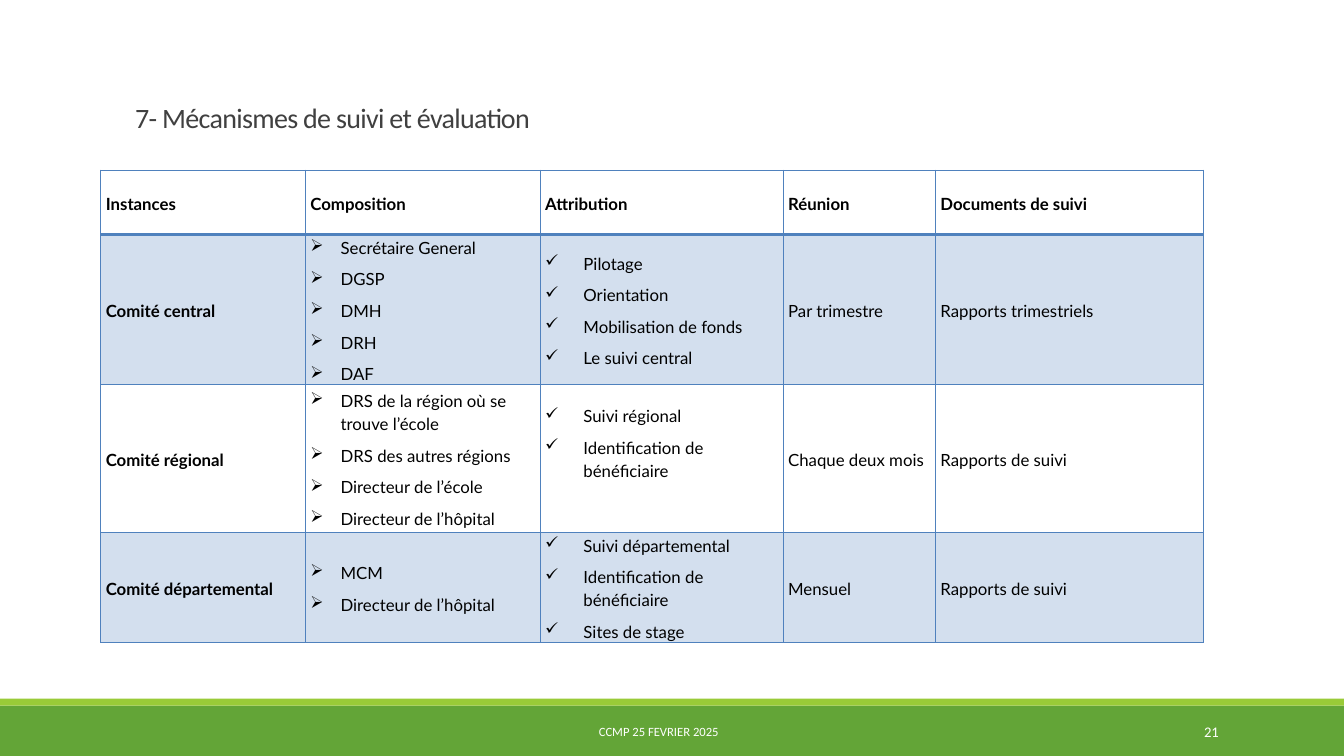
from dataclasses import dataclass

from lxml.etree import SubElement
from pptx import Presentation
from pptx.dml.color import RGBColor
from pptx.enum.shapes import MSO_SHAPE as Shape
from pptx.enum.text import MSO_ANCHOR as Anchor, PP_ALIGN as Align
from pptx.oxml.ns import qn
from pptx.util import Emu, Inches, Pt


@dataclass(frozen=True)
class Theme:
    green: str = "63A537"
    lime: str = "99CB38"
    white: str = "FFFFFF"
    black: str = "000000"
    heading: str = "404040"
    border: str = "4F81BD"
    band: str = "D3DFEE"
    main_font: str = "Calibri"
    table_font: str = "Lato"
    title_size: float = 20
    table_size: float = 12
    number_size: float = 10.5
    footer_size: float = 9
    thin: float = 1
    thick: float = 2.25


def apply(target, formats):
    for name, value in formats.items():
        setattr(target, name, value)


@dataclass(frozen=True)
class Bullets:
    mark: str
    indent: float
    items: tuple
    bottom: float = 0


def members(*items):
    return Bullets("➢", 0.3, items)


def tasks(*items, bottom=0):
    return Bullets("✓", 0.38, items, bottom)


class SlideBuilder:
    """Places elements by percentages of the slide's width and height."""

    def __init__(self, deck, theme):
        self.deck, self.theme = deck, theme
        self.slide = deck.slides.add_slide(deck.slide_layouts[5])

    def across(self, share):
        return Emu(round(self.deck.slide_width * share / 100))

    def down(self, share):
        return Emu(round(self.deck.slide_height * share / 100))

    def area(self, left, top, width, height):
        return self.across(left), self.down(top), self.across(width), self.down(height)

    def add_words(self, paragraph, text, size, color, font=None, bold=False):
        run = paragraph.add_run()
        run.text = text
        apply(run.font, {"size": Pt(size), "name": font or self.theme.main_font, "bold": bold})
        run.font.color.rgb = RGBColor.from_string(color)
        return run

    def title(self, text, area):
        heading = self.slide.shapes.title
        apply(heading, dict(zip(("left", "top", "width", "height"), self.area(*area))))
        apply(heading.text_frame, {"vertical_anchor": Anchor.TOP, "word_wrap": True})
        line = heading.text_frame.paragraphs[0]
        line.alignment = Align.LEFT
        line._p.get_or_add_pPr().set("indent", str(Inches(0.3)))
        run = self.add_words(line, text, self.theme.title_size, self.theme.heading)
        run.font._element.set("spc", "-50")

    def bar(self, color, area):
        strip = self.slide.shapes.add_shape(Shape.RECTANGLE, *self.area(*area))
        strip.shadow.inherit = False
        strip.fill.solid()
        strip.fill.fore_color.rgb = RGBColor.from_string(color)
        strip.line.fill.background()

    def caption(self, text, area, size, align):
        frame = self.slide.shapes.add_textbox(*self.area(*area)).text_frame
        apply(frame, {"word_wrap": True, "vertical_anchor": Anchor.MIDDLE})
        frame.paragraphs[0].alignment = align
        self.add_words(frame.paragraphs[0], text, size, self.theme.white)

    def borders(self, cell, widths):
        for side, width in widths.items():
            edge = SubElement(cell._tc.get_or_add_tcPr(), qn(f"a:ln{side}"), w=str(Pt(width)))
            paint = SubElement(edge, qn("a:solidFill"))
            SubElement(paint, qn("a:srgbClr"), val=self.theme.border)

    def fill_cell(self, cell, content, bold):
        listed = isinstance(content, Bullets)
        apply(cell, {
            "margin_left": Inches(0.05), "margin_right": Inches(0.05), "margin_top": 0,
            "margin_bottom": Inches(content.bottom if listed else 0),
            "vertical_anchor": Anchor.MIDDLE,
        })
        for index, text in enumerate(content.items if listed else (content,)):
            frame = cell.text_frame
            line = frame.add_paragraph() if index else frame.paragraphs[0]
            apply(line, {"line_spacing": 1.15, "space_after": Pt(6 if listed else 10)})
            if listed:
                props = line._p.get_or_add_pPr()
                props.set("marL", str(Inches(content.indent)))
                props.set("indent", str(-Inches(content.indent)))
                SubElement(props, qn("a:buChar"), char=content.mark)
            self.add_words(line, text, self.theme.table_size, self.theme.black,
                           self.theme.table_font, bold)

    def table(self, rows, left, top, columns, heights):
        area = self.area(left, top, sum(columns), sum(heights))
        grid = self.slide.shapes.add_table(len(rows), len(columns), *area).table
        apply(grid, {"first_row": False, "horz_banding": False})
        for column, width in zip(grid.columns, columns):
            column.width = self.across(width)
        for row, height in zip(grid.rows, heights):
            row.height = self.down(height)
        thin, thick = self.theme.thin, self.theme.thick
        for r, contents in enumerate(rows):
            for c, content in enumerate(contents):
                cell = grid.cell(r, c)
                self.fill_cell(cell, content, bold=r == 0 or c == 0)
                self.borders(cell, {"L": thin, "R": thin,
                                    "T": thick if r == 1 else thin,
                                    "B": thick if r == 0 else thin})
                if r % 2:
                    cell.fill.solid()
                    cell.fill.fore_color.rgb = RGBColor.from_string(self.theme.band)
                else:
                    cell.fill.background()


COMMITTEES = (
    ("Instances", "Composition", "Attribution", "Réunion", "Documents de suivi"),
    ("Comité central",
     members("Secrétaire General", "DGSP", "DMH", "DRH", "DAF"),
     tasks("Pilotage", "Orientation", "Mobilisation de fonds", "Le suivi central"),
     "Par trimestre", "Rapports trimestriels"),
    ("Comité régional",
     members("DRS de la région où se trouve l’école", "DRS des autres régions",
             "Directeur de l’école", "Directeur de l’hôpital"),
     tasks("Suivi régional", "Identification de bénéficiaire", bottom=0.32),
     "Chaque deux mois", "Rapports de suivi"),
    ("Comité départemental",
     members("MCM", "Directeur de l’hôpital"),
     tasks("Suivi départemental", "Identification de bénéficiaire", "Sites de stage"),
     "Mensuel", "Rapports de suivi"),
)


def main():
    deck = Presentation()
    apply(deck, {"slide_width": Inches(13.33), "slide_height": Inches(7.5)})
    theme = Theme()
    page = SlideBuilder(deck, theme)

    # Footer band
    page.bar(theme.green, (0, 93.33, 100, 6.67))
    page.bar(theme.lime, (0, 92.4, 100, 0.93))
    page.caption("CCMP 25 FEVRIER 2025", (30.22, 94.13, 37.58, 5.33),
                 theme.footer_size, Align.CENTER)
    page.caption("21", (81.23, 94.13, 10.2, 5.33), theme.number_size, Align.RIGHT)

    # Heading
    page.title("7- Mécanismes de suivi et évaluation", (7.05, 12.67, 47.02, 5.87))

    # Committees and their follow-up
    page.table(COMMITTEES, left=7.5, top=22.53,
               columns=(15.22, 17.47, 18.08, 11.33, 19.95),
               heights=(8.5, 19.73, 19.6, 14.53))

    deck.save("out.pptx")


if __name__ == "__main__":
    main()
